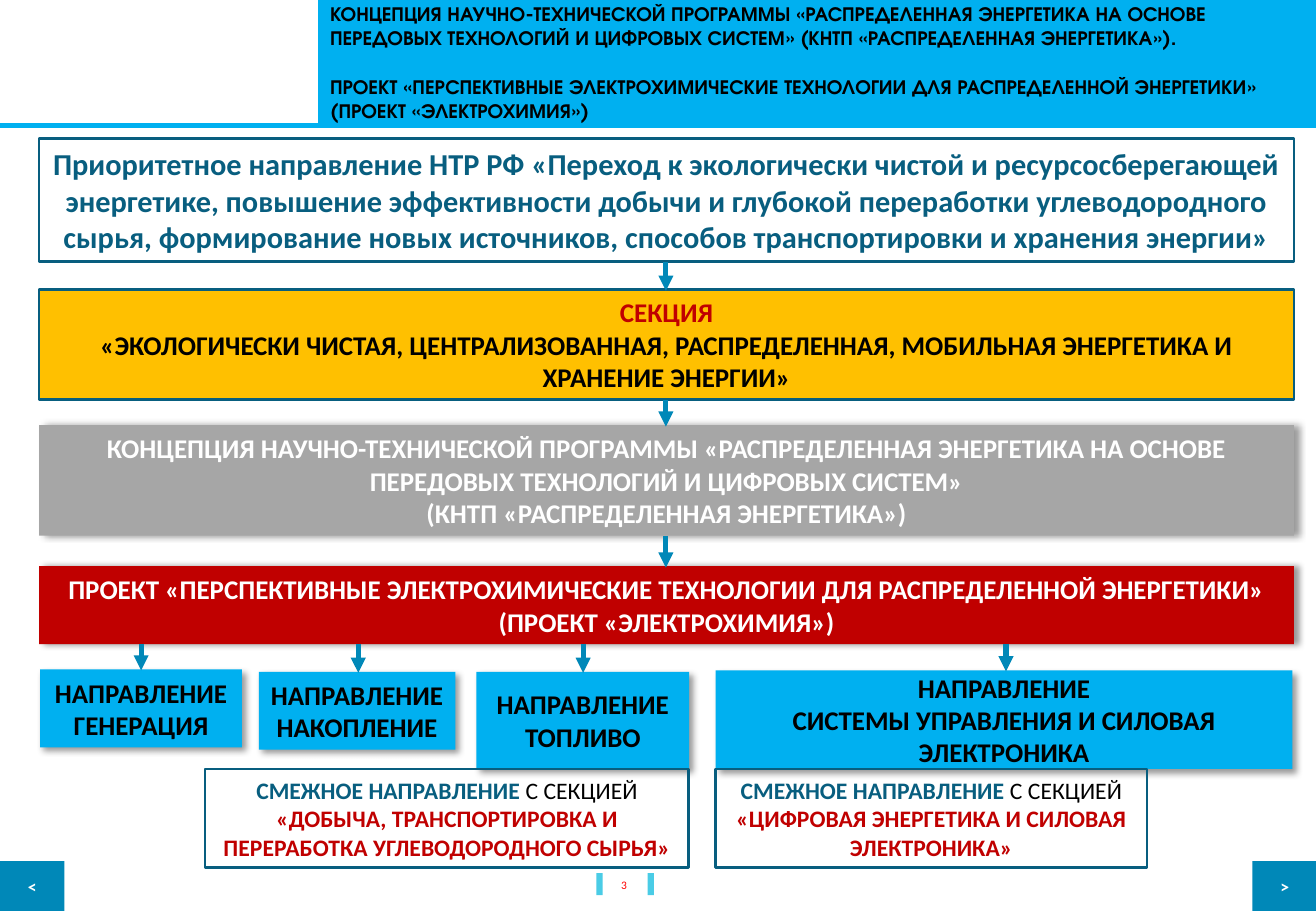
from lxml import etree
from pptx import Presentation
from pptx.dml.color import RGBColor
from pptx.enum.shapes import MSO_CONNECTOR, MSO_SHAPE
from pptx.enum.text import MSO_ANCHOR, PP_ALIGN
from pptx.oxml.ns import qn
from pptx.util import Cm, Pt

RECTANGLE = MSO_SHAPE.RECTANGLE
STRAIGHT = MSO_CONNECTOR.STRAIGHT
MIDDLE = MSO_ANCHOR.MIDDLE
CENTER, LEFT = PP_ALIGN.CENTER, PP_ALIGN.LEFT

SKY, BLUE, NAVY, AQUA = "00B0F0", "0088B8", "085E7F", "4ACCE6"
AMBER, GREY, CRIMSON, RED = "FFC000", "A6A6A6", "C00000", "FF0000"
WHITE, BLACK = "FFFFFF", "000000"

AXIS = 13.92
LEVEL_LEFT, LEVEL_WIDTH = 0.82, 26.23
RELATED_TOP, RELATED_HEIGHT = 16.08, 2.06

PROGRAMME = ("КОНЦЕПЦИЯ НАУЧНО-ТЕХНИЧЕСКОЙ ПРОГРАММЫ «РАСПРЕДЕЛЕННАЯ ЭНЕРГЕТИКА "
             "НА ОСНОВЕ ПЕРЕДОВЫХ ТЕХНОЛОГИЙ И ЦИФРОВЫХ СИСТЕМ»")
PROGRAMME_SHORT = "(КНТП «РАСПРЕДЕЛЕННАЯ ЭНЕРГЕТИКА»)"
PROJECT = ("ПРОЕКТ «ПЕРСПЕКТИВНЫЕ ЭЛЕКТРОХИМИЧЕСКИЕ ТЕХНОЛОГИИ ДЛЯ "
           "РАСПРЕДЕЛЕННОЙ ЭНЕРГЕТИКИ» (ПРОЕКТ «ЭЛЕКТРОХИМИЯ»)")
PRIORITY = ("Приоритетное направление НТР РФ «Переход к экологически чистой и "
            "ресурсосберегающей энергетике, повышение эффективности добычи и глубокой "
            "переработки углеводородного сырья, формирование новых источников, "
            "способов транспортировки и хранения энергии»")
SECTION = ("«ЭКОЛОГИЧЕСКИ ЧИСТАЯ, ЦЕНТРАЛИЗОВАННАЯ, РАСПРЕДЕЛЕННАЯ, "
           "МОБИЛЬНАЯ ЭНЕРГЕТИКА И ХРАНЕНИЕ ЭНЕРГИИ»")

DIRECTIONS = [  # name, left, top, width, height, arrow position
    ("ГЕНЕРАЦИЯ", 0.84, 14.0, 4.22, 1.63, 2.95),
    ("НАКОПЛЕНИЕ", 5.41, 14.05, 4.11, 1.63, 7.49),
    ("ТОПЛИВО", 9.96, 14.05, 4.45, 2.03, 12.19),
    ("СИСТЕМЫ УПРАВЛЕНИЯ И СИЛОВАЯ ЭЛЕКТРОНИКА", 14.96, 14.02, 12.06, 2.06, 21.03),
]
RELATED = [  # section, left, width
    ("«ДОБЫЧА, ТРАНСПОРТИРОВКА И ПЕРЕРАБОТКА УГЛЕВОДОРОДНОГО СЫРЬЯ»", 4.29, 10.11),
    ("«ЦИФРОВАЯ ЭНЕРГЕТИКА И СИЛОВАЯ ЭЛЕКТРОНИКА»", 14.96, 9.02),
]


def color(value):
    return RGBColor.from_string(value)


def set_all(target, values):
    for name, value in values.items():
        setattr(target, name, value)


def write(shape, paragraphs, size, font="Calibri", align=CENTER, margin=0.13, gap=0):
    """Fill a shape with paragraphs, each a list of (text, colour, bold) runs."""
    frame = shape.text_frame
    set_all(frame, {"word_wrap": True, "vertical_anchor": MIDDLE,
                    "margin_left": Cm(margin), "margin_right": Cm(margin),
                    "margin_top": Cm(0.13), "margin_bottom": Cm(0.13)})
    for index, runs in enumerate(paragraphs):
        paragraph = frame.add_paragraph() if index else frame.paragraphs[0]
        paragraph.alignment = align
        if index and gap:
            paragraph.space_before = Pt(gap)
        for text, ink, bold in runs:
            run = paragraph.add_run()
            run.text = text
            set_all(run.font, {"name": font, "size": Pt(size), "bold": bold})
            run.font.color.rgb = color(ink)


def add_shadow(shape, angle):
    effects = shape._element.spPr.find(qn("a:effectLst"))
    shadow = etree.SubElement(effects, qn("a:outerShdw"), blurRad=str(Pt(4)),
                              dist=str(Pt(3)), dir=str(angle * 60000),
                              algn="tl", rotWithShape="0")
    ink = etree.SubElement(shadow, qn("a:srgbClr"), val=BLACK)
    etree.SubElement(ink, qn("a:alpha"), val="40000")


def add_box(slide, left, top, width, height, fill=None, outline=None, shadow_angle=None):
    box = slide.shapes.add_shape(RECTANGLE, Cm(left), Cm(top), Cm(width), Cm(height))
    box.shadow.inherit = False
    if fill:
        box.fill.solid()
        box.fill.fore_color.rgb = color(fill)
    else:
        box.fill.background()
    if outline:
        box.line.color.rgb = color(outline)
        box.line.width = Pt(1.5)
    else:
        box.line.fill.background()
    if shadow_angle is not None:
        add_shadow(box, shadow_angle)
    return box


def add_line(slide, x1, y1, x2, y2, ink):
    line = slide.shapes.add_connector(STRAIGHT, Cm(x1), Cm(y1), Cm(x2), Cm(y2))
    line.line.color.rgb = color(ink)
    line.line.width = Pt(3)
    etree.SubElement(line._element.spPr, qn("a:effectLst"))
    return line


def add_down_arrow(slide, x, top, bottom):
    arrow = add_line(slide, x, top, x, bottom, BLUE)
    etree.SubElement(arrow.line._get_or_add_ln(), qn("a:tailEnd"), type="triangle")


def add_header(slide):
    add_line(slide, 0, 2.62, 27.51, 2.62, SKY)
    header = add_box(slide, 6.65, 0, 20.86, 2.59, SKY)
    write(header, [[(f"{PROGRAMME} {PROGRAMME_SHORT}.", BLACK, True)],
                   [(PROJECT, BLACK, True)]],
          12, "TeX Gyre Adventor", LEFT, 0.25, 14.4)


def add_footer(slide):
    for sign, left in (("<", 0), (">", 26.18)):
        button = add_box(slide, left, 18.01, 1.35, 1.04, BLUE)
        write(button, [[(sign, WHITE, True)]], 10.5)
    for left in (12.47, 13.54):
        add_box(slide, left, 18.26, 0.13, 0.46, AQUA)
    number = slide.shapes.add_textbox(Cm(11.05), Cm(18.26), Cm(3.99), Cm(0.51))
    write(number, [[("3", RED, False)]], 6.8)


def add_levels(slide):
    levels = [  # top, height, fill, outline, shadow angle, size, paragraphs
        (2.9, 2.57, None, NAVY, None, 18, [[(PRIORITY, NAVY, True)]]),
        (6.05, 2.31, AMBER, NAVY, None, 16,
         [[("СЕКЦИЯ", CRIMSON, True)], [(SECTION, BLACK, True)]]),
        (8.89, 2.31, GREY, None, 0, 16,
         [[(PROGRAMME, WHITE, True)], [(PROGRAMME_SHORT, WHITE, True)]]),
        (11.84, 1.63, CRIMSON, None, 0, 16, [[(PROJECT, WHITE, True)]]),
    ]
    for top, height, fill, outline, angle, size, paragraphs in levels:
        box = add_box(slide, LEVEL_LEFT, top, LEVEL_WIDTH, height, fill, outline, angle)
        write(box, paragraphs, size)
    for upper, lower in zip(levels, levels[1:]):
        add_down_arrow(slide, AXIS, upper[0] + upper[1], lower[0] + 0.03)


def add_directions(slide):
    for name, left, top, width, height, arrow in DIRECTIONS:
        box = add_box(slide, left, top, width, height, SKY, shadow_angle=45)
        write(box, [[("НАПРАВЛЕНИЕ", BLACK, True)], [(name, BLACK, True)]], 16)
        add_down_arrow(slide, arrow, 13.46, top + 0.02)


def add_related(slide):
    for section, left, width in RELATED:
        box = add_box(slide, left, RELATED_TOP, width, RELATED_HEIGHT, outline=NAVY)
        write(box, [[("СМЕЖНОЕ НАПРАВЛЕНИЕ ", NAVY, True), ("С СЕКЦИЕЙ", BLACK, False)],
                    [(section, CRIMSON, True)]], 14)


def main():
    deck = Presentation()
    set_all(deck, {"slide_width": Cm(27.51), "slide_height": Cm(19.05)})
    slide = deck.slides.add_slide(deck.slide_layouts[6])
    add_header(slide)
    add_footer(slide)
    add_levels(slide)
    add_directions(slide)
    add_related(slide)
    deck.save("out.pptx")


if __name__ == "__main__":
    main()
